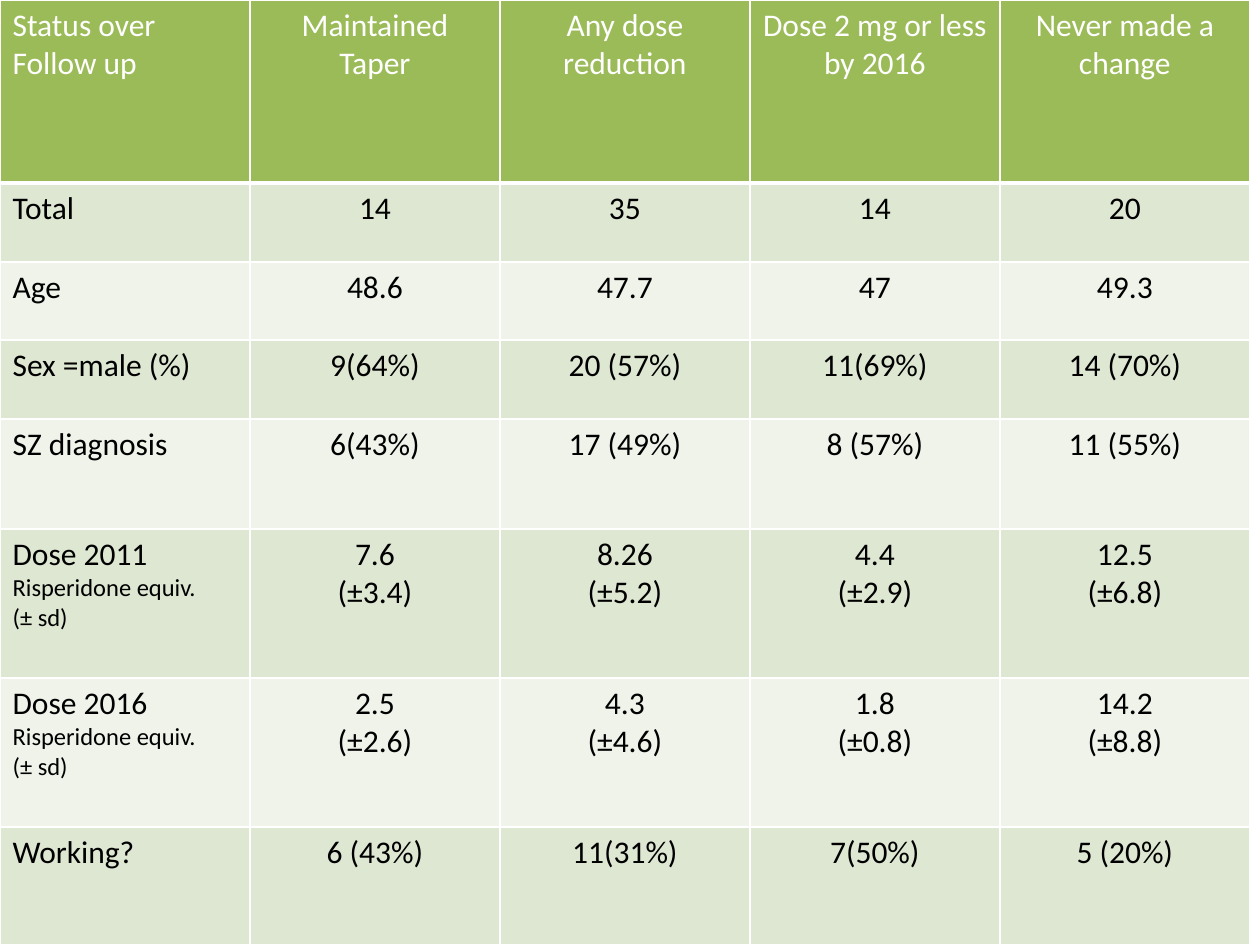
from dataclasses import dataclass

from lxml import etree
from pptx import Presentation
from pptx import util as u
from pptx.dml.color import RGBColor
from pptx.enum import text
from pptx.oxml import ns

PX = u.Inches(1) // 126  # EMU in one px


@dataclass(frozen=True)
class Theme:
    font: str = "Calibri"
    size: int = 18
    small: int = 14
    head: str = "9BBB59"
    bands: tuple[str, str] = ("DEE7D1", "EFF3EA")
    white: str = "FFFFFF"
    black: str = "000000"
    line: int = 1
    rule: int = 3


@dataclass(frozen=True)
class Row:
    height: int
    label: str
    values: tuple[str, ...]


THEME = Theme()
COL = 250
UNIT = "\nRisperidone equiv.\n(± sd)"
ROWS = [
    Row(183, "Status over\nFollow up",
        ("Maintained Taper", "Any dose reduction",
         "Dose 2 mg or less by 2016", "Never made a change")),
    Row(79, "Total", ("14", "35", "14", "20")),
    Row(78, "Age", ("48.6", "47.7", "47", "49.3")),
    Row(79, "Sex =male (%)", ("9(64%)", "20 (57%)", "11(69%)", "14 (70%)")),
    Row(110, "SZ diagnosis", ("6(43%)", "17 (49%)", "8 (57%)", "11 (55%)")),
    Row(149, "Dose 2011" + UNIT,
        ("7.6\n(±3.4)", "8.26\n(±5.2)", "4.4\n(±2.9)", "12.5\n(±6.8)")),
    Row(149, "Dose 2016" + UNIT,
        ("2.5\n(±2.6)", "4.3\n(±4.6)", "1.8\n(±0.8)", "14.2\n(±8.8)")),
    Row(118, "Working?", ("6 (43%)", "11(31%)", "7(50%)", "5 (20%)")),
]


def px(n: int) -> u.Emu:
    return u.Emu(n * PX)


def edge(cell, side: str, width: int) -> None:
    """Add one white border; call before the fill is set."""
    line = etree.SubElement(cell._tc.get_or_add_tcPr(), ns.qn(f"a:ln{side}"),
                            w=str(u.Pt(width)))
    fill = etree.SubElement(line, ns.qn("a:solidFill"))
    etree.SubElement(fill, ns.qn("a:srgbClr"), val=THEME.white)


def write(cell, words: str, color: str, label: bool) -> None:
    """Fill a cell line by line; a label's unit lines are small."""
    frame = cell.text_frame
    small = label and words.endswith(UNIT)
    for i, line in enumerate(words.split("\n")):
        para = frame.add_paragraph() if i else frame.paragraphs[0]
        para.alignment = text.PP_ALIGN.LEFT if label else text.PP_ALIGN.CENTER
        run = para.add_run()
        run.text = line
        font = run.font
        font.name = THEME.font
        font.size = u.Pt(THEME.small if small and i else THEME.size)
        font.bold = False
        font.color.rgb = RGBColor.from_string(color)


def draw(table, r: int, row: Row) -> None:
    head = r == 0
    back = THEME.head if head else THEME.bands[(r - 1) % 2]
    color = THEME.white if head else THEME.black
    table.rows[r].height = px(row.height)
    for c, words in enumerate((row.label, *row.values)):
        cell = table.cell(r, c)
        for side in "LRTB":
            edge(cell, side, THEME.rule if head and side == "B" else THEME.line)
        cell.fill.solid()
        cell.fill.fore_color.rgb = RGBColor.from_string(back)
        write(cell, words, color, c == 0)


def main() -> None:
    deck = Presentation()
    deck.slide_width, deck.slide_height = px(1260), px(945)
    slide = deck.slides.add_slide(deck.slide_layouts[6])
    cols = 1 + len(ROWS[0].values)
    high = sum(row.height for row in ROWS)
    table = slide.shapes.add_table(len(ROWS), cols, 0, 0,
                                   px(cols * COL), px(high)).table
    table.horz_banding = False
    for col in table.columns:
        col.width = px(COL)
    for r, row in enumerate(ROWS):
        draw(table, r, row)
    deck.save("out.pptx")


if __name__ == "__main__":
    main()
